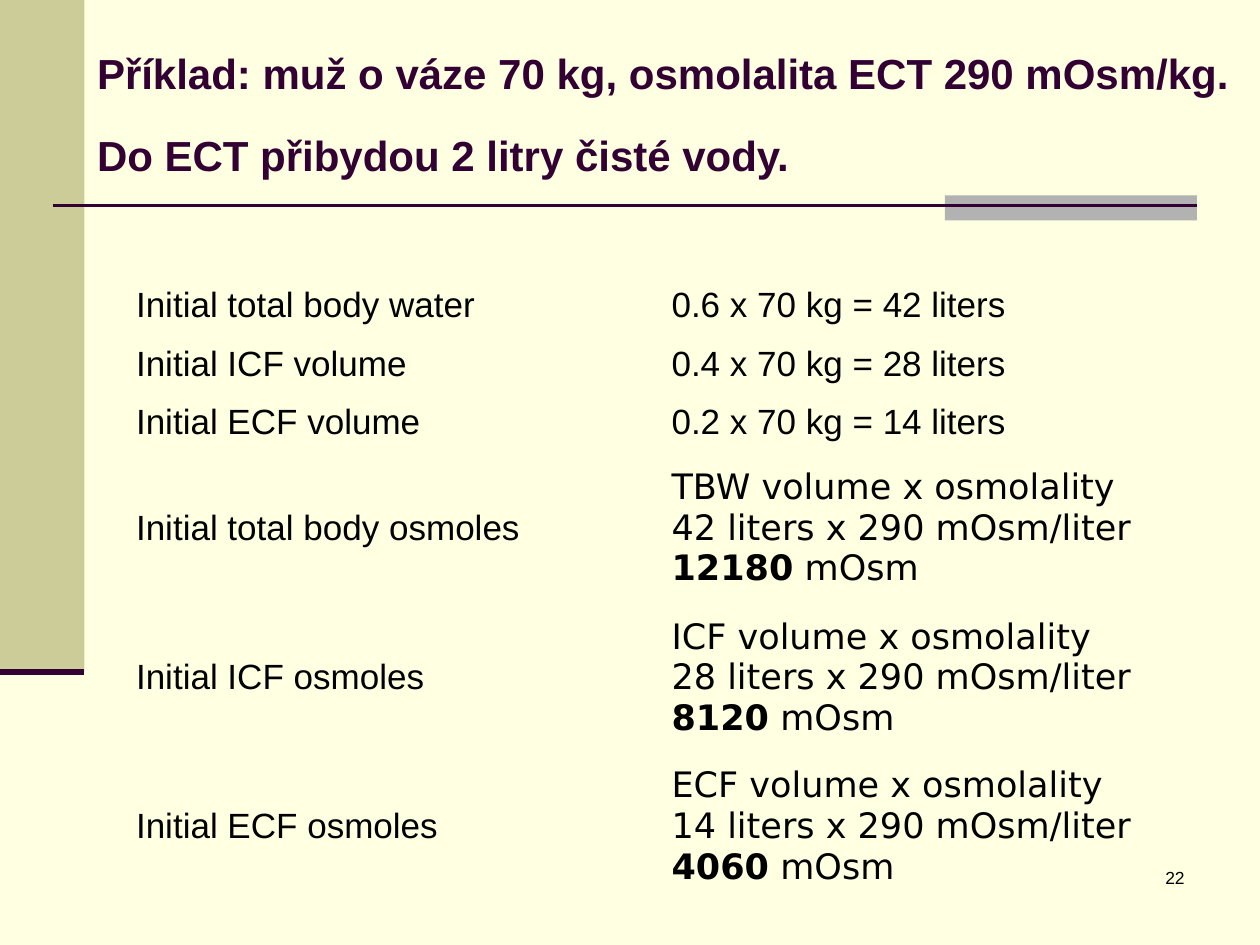
from pptx import Presentation
from pptx.dml.color import RGBColor
from pptx.enum.shapes import MSO_CONNECTOR, MSO_SHAPE
from pptx.enum.text import MSO_ANCHOR, PP_ALIGN
from pptx.oxml.ns import qn
from pptx.util import Inches, Pt

RECTANGLE = MSO_SHAPE.RECTANGLE
STRAIGHT = MSO_CONNECTOR.STRAIGHT
MIDDLE = MSO_ANCHOR.MIDDLE
LEFT, RIGHT = PP_ALIGN.LEFT, PP_ALIGN.RIGHT

COLORS = {"paper": "FFFFE1", "band": "CCCC99", "accent": "B2B2B2",
          "plum": "330033", "text": "000000"}
NO_STYLE_NO_GRID = "{2D5ABB26-0587-4C30-8999-92F81FD0307C}"
BAND_WIDTH, BAND_HEIGHT = 0.67, 5.33
RIGHT_EDGE, RULE_Y = 9.5, 1.63
HANGING = Inches(0.38)


def color(name):
    return RGBColor.from_string(COLORS[name])


def add_text(para, text, size=20, font="Arial", tint="text", bold=False, align=LEFT):
    para.alignment = align
    span = para.add_run()
    span.text = text
    span.font.size = Pt(size)
    span.font.name = font
    span.font.bold = bold
    span.font.color.rgb = color(tint)


deck = Presentation()
deck.slide_width, deck.slide_height = Inches(10), Inches(7.5)
page = deck.slides.add_slide(deck.slide_layouts[5])
page.background.fill.solid()
page.background.fill.fore_color.rgb = color("paper")

# Side band and accent block
for name, *place in (("band", 0, 0, BAND_WIDTH, BAND_HEIGHT),
                     ("accent", RIGHT_EDGE - 2, 1.55, 2, 0.2)):
    block = page.shapes.add_shape(RECTANGLE, *map(Inches, place))
    block.shadow.inherit = False
    block.fill.solid()
    block.fill.fore_color.rgb = color(name)
    block.line.fill.background()

# Rules under the title and under the side band
for start, end, y, weight in ((0.42, RIGHT_EDGE, RULE_Y, 1.5),
                              (0, BAND_WIDTH, BAND_HEIGHT, 3.5)):
    rule = page.shapes.add_connector(STRAIGHT, *map(Inches, (start, y, end, y)))
    rule.line.color.rgb = color("plum")
    rule.line.width = Pt(weight)
    properties = rule._element.spPr
    properties.append(properties.makeelement(qn("a:effectLst"), {}))

# Page number
number_box = page.shapes.add_textbox(*map(Inches, (RIGHT_EDGE - 2.08, 6.83, 2.08, 0.5)))
number_box.text_frame.word_wrap = True
add_text(number_box.text_frame.paragraphs[0], "22", size=10, align=RIGHT)

# Title; the large closing space sets the height of its second line
title = page.shapes.title
title.left, title.top, title.width, title.height = map(Inches, (BAND_WIDTH, 0.3, 9.33, 1.25))
title.text_frame.word_wrap = True
title.text_frame.vertical_anchor = MIDDLE
heading = title.text_frame.paragraphs[0]
add_text(heading, "Příklad: muž o váze 70 kg, osmolalita ECT 290 mOsm/kg. "
         "Do ECT přibydou 2 litry čisté vody.", size=24, tint="plum", bold=True)
add_text(heading, " ", size=42, font="Times New Roman", tint="plum")

# Each row: height, label, value; osmole rows derive their three lines
rows = [(height, f"Initial {label}", [f"{share} x 70 kg = {liters} liters"])
        for height, label, share, liters in ((0.48, "total body water", 0.6, 42),
                                             (0.46, "ICF volume", 0.4, 28),
                                             (0.47, "ECF volume", 0.2, 14))]
rows += [(height, f"Initial {label} osmoles",
          [f"{short} volume x osmolality", f"{liters} liters x 290 mOsm/liter", liters * 290])
         for height, label, short, liters in ((1.2, "total body", "TBW", 42),
                                              (1.18, "ICF", "ICF", 28),
                                              (1.18, "ECF", "ECF", 14))]

table_height = sum(row[0] for row in rows)
table = page.shapes.add_table(len(rows), 2, *map(Inches, (0.98, 2.18, 8.5, table_height))).table
table.first_row = table.horz_banding = False
table._tbl.tblPr.find(qn("a:tableStyleId")).text = NO_STYLE_NO_GRID

for row_index, (height, label, values) in enumerate(rows):
    table.rows[row_index].height = Inches(height)
    value_font = "DejaVu Sans" if len(values) > 1 else "Arial"
    for column, (lines, font) in enumerate((([label], "Arial"), (values, value_font))):
        cell = table.cell(row_index, column)
        cell.fill.background()
        cell.vertical_anchor = MIDDLE
        frame = cell.text_frame
        for line_index, line in enumerate(lines):
            para = frame.add_paragraph() if line_index else frame.paragraphs[0]
            indent = para._p.get_or_add_pPr()
            indent.set("marL", str(HANGING))
            indent.set("indent", str(-HANGING))
            if isinstance(line, int):
                add_text(para, str(line), font=font, bold=True)
                line = " mOsm"
            add_text(para, line, font=font)

deck.save("out.pptx")
